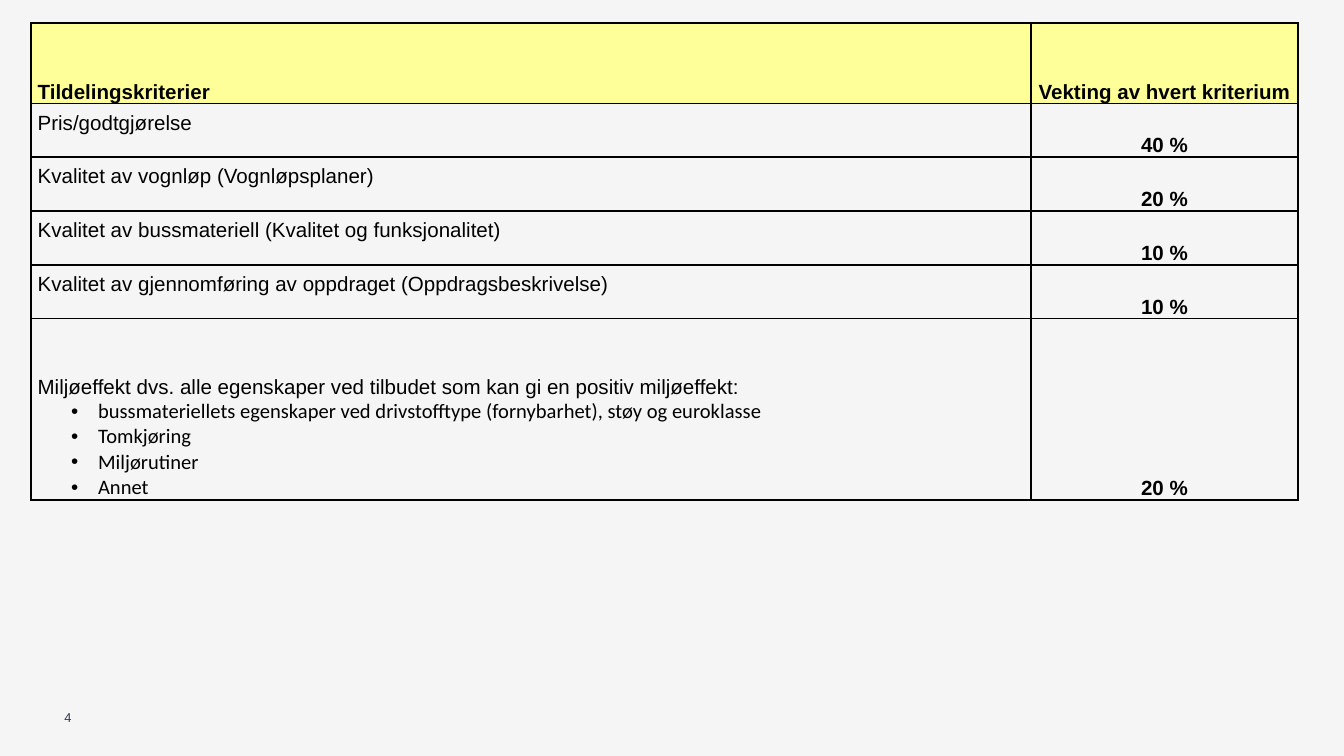
from dataclasses import dataclass

from lxml import etree
from pptx import Presentation
from pptx.dml.color import RGBColor
from pptx.enum.text import MSO_ANCHOR, PP_ALIGN
from pptx.oxml.ns import qn
from pptx.util import Inches, Pt

BOTTOM, MIDDLE = MSO_ANCHOR.BOTTOM, MSO_ANCHOR.MIDDLE
LEFT, CENTER = PP_ALIGN.LEFT, PP_ALIGN.CENTER
BLANK_LAYOUT = 6


@dataclass(frozen=True)
class Theme:
    background: str = "F5F5F5"
    header_fill: str = "FFFF99"
    text: str = "000000"
    border: str = "000000"
    page_number: str = "32374B"
    font: str = "Arial"
    bullet_font: str = "Calibri"
    body_size: float = 11
    page_number_size: float = 6.9
    border_width: float = 1


HEADERS = ("Tildelingskriterier", "Vekting av hvert kriterium")
CRITERIA = [
    ("Pris/godtgjørelse", "40 %"),
    ("Kvalitet av vognløp (Vognløpsplaner)", "20 %"),
    ("Kvalitet av bussmateriell (Kvalitet og funksjonalitet)", "10 %"),
    ("Kvalitet av gjennomføring av oppdraget (Oppdragsbeskrivelse)", "10 %"),
]
ENVIRONMENT = (
    "Miljøeffekt dvs. alle egenskaper ved tilbudet som kan gi en positiv miljøeffekt:",
    "20 %",
)
ENVIRONMENT_POINTS = [
    "bussmateriellets egenskaper ved drivstofftype (fornybarhet), støy og euroklasse",
    "Tomkjøring",
    "Miljørutiner",
    "Annet",
]
COLUMN_WIDTHS = (7.44, 1.99)
ROW_HEIGHTS = [0.6] + [0.4] * len(CRITERIA) + [1.35]
LINE_GAP = 0.17  # one line of room below each plain criterion


class SlideBuilder:
    def __init__(self, slide, theme):
        self.slide = slide
        self.theme = theme

    def background(self):
        fill = self.slide.background.fill
        fill.solid()
        fill.fore_color.rgb = RGBColor.from_string(self.theme.background)

    def format_runs(self, paragraph, font, size, color, bold=False):
        for run in paragraph.runs:
            run.font.name = font
            run.font.size = Pt(size)
            run.font.bold = bold
            run.font.color.rgb = RGBColor.from_string(color)

    def page_number(self, text, left, top, width, height):
        box = self.slide.shapes.add_textbox(
            Inches(left), Inches(top), Inches(width), Inches(height))
        frame = box.text_frame
        frame.margin_left = frame.margin_right = 0
        frame.margin_top = frame.margin_bottom = 0
        frame.vertical_anchor = MIDDLE
        frame.word_wrap = True
        frame.text = text
        self.format_runs(frame.paragraphs[0], self.theme.font,
                         self.theme.page_number_size, self.theme.page_number)

    def table(self, left, top, column_widths, row_heights):
        frame = self.slide.shapes.add_table(
            len(row_heights), len(column_widths), Inches(left), Inches(top),
            Inches(sum(column_widths)), Inches(sum(row_heights)))
        table = frame.table
        table.first_row = table.horz_banding = False
        for column, width in zip(table.columns, column_widths):
            column.width = Inches(width)
        for row, height in zip(table.rows, row_heights):
            row.height = Inches(height)
        return table

    def borders(self, cell):
        properties = cell._tc.get_or_add_tcPr()
        for side in ("a:lnL", "a:lnR", "a:lnT", "a:lnB"):
            line = etree.SubElement(properties, qn(side),
                                    w=str(Pt(self.theme.border_width)))
            fill = etree.SubElement(line, qn("a:solidFill"))
            etree.SubElement(fill, qn("a:srgbClr"), val=self.theme.border)

    def cell(self, cell, text, bold=False, align=LEFT, fill=None, gap_below=0):
        self.borders(cell)
        if fill:
            cell.fill.solid()
            cell.fill.fore_color.rgb = RGBColor.from_string(fill)
        else:
            cell.fill.background()
        cell.margin_left = cell.margin_right = Inches(0.05)
        cell.margin_top = 0
        cell.margin_bottom = Inches(gap_below)
        cell.vertical_anchor = BOTTOM
        cell.text_frame.text = text
        paragraph = cell.text_frame.paragraphs[0]
        paragraph.alignment = align
        self.format_runs(paragraph, self.theme.font, self.theme.body_size,
                         self.theme.text, bold)

    def bullet(self, cell, text):
        paragraph = cell.text_frame.add_paragraph()
        paragraph.text = text
        properties = paragraph._p.get_or_add_pPr()
        properties.set("marL", str(Inches(0.45)))
        properties.set("indent", str(Inches(-0.2)))
        etree.SubElement(properties, qn("a:buFont"), typeface=self.theme.font)
        etree.SubElement(properties, qn("a:buChar"), char="•")
        self.format_runs(paragraph, self.theme.bullet_font,
                         self.theme.body_size, self.theme.text)


def main():
    presentation = Presentation()
    # Widescreen 16:9
    presentation.slide_width = Inches(10)
    presentation.slide_height = Inches(10 * 9 / 16)
    slide = presentation.slides.add_slide(presentation.slide_layouts[BLANK_LAYOUT])
    theme = Theme()
    builder = SlideBuilder(slide, theme)
    builder.background()
    builder.page_number("4", 0.48, 5.28, 0.16, 0.12)

    # Award criteria and their weights
    table = builder.table(0.23, 0.17, COLUMN_WIDTHS, ROW_HEIGHTS)

    # Header row
    for column, (text, align) in enumerate(zip(HEADERS, (LEFT, CENTER))):
        builder.cell(table.cell(0, column), text, bold=True, align=align,
                     fill=theme.header_fill)

    # Criterion rows
    for row, (criterion, weight) in enumerate(CRITERIA + [ENVIRONMENT], start=1):
        gap = LINE_GAP if row <= len(CRITERIA) else 0
        builder.cell(table.cell(row, 0), criterion, gap_below=gap)
        builder.cell(table.cell(row, 1), weight, bold=True, align=CENTER)

    # Points under the environment criterion
    for point in ENVIRONMENT_POINTS:
        builder.bullet(table.cell(len(ROW_HEIGHTS) - 1, 0), point)

    presentation.save("out.pptx")


if __name__ == "__main__":
    main()
